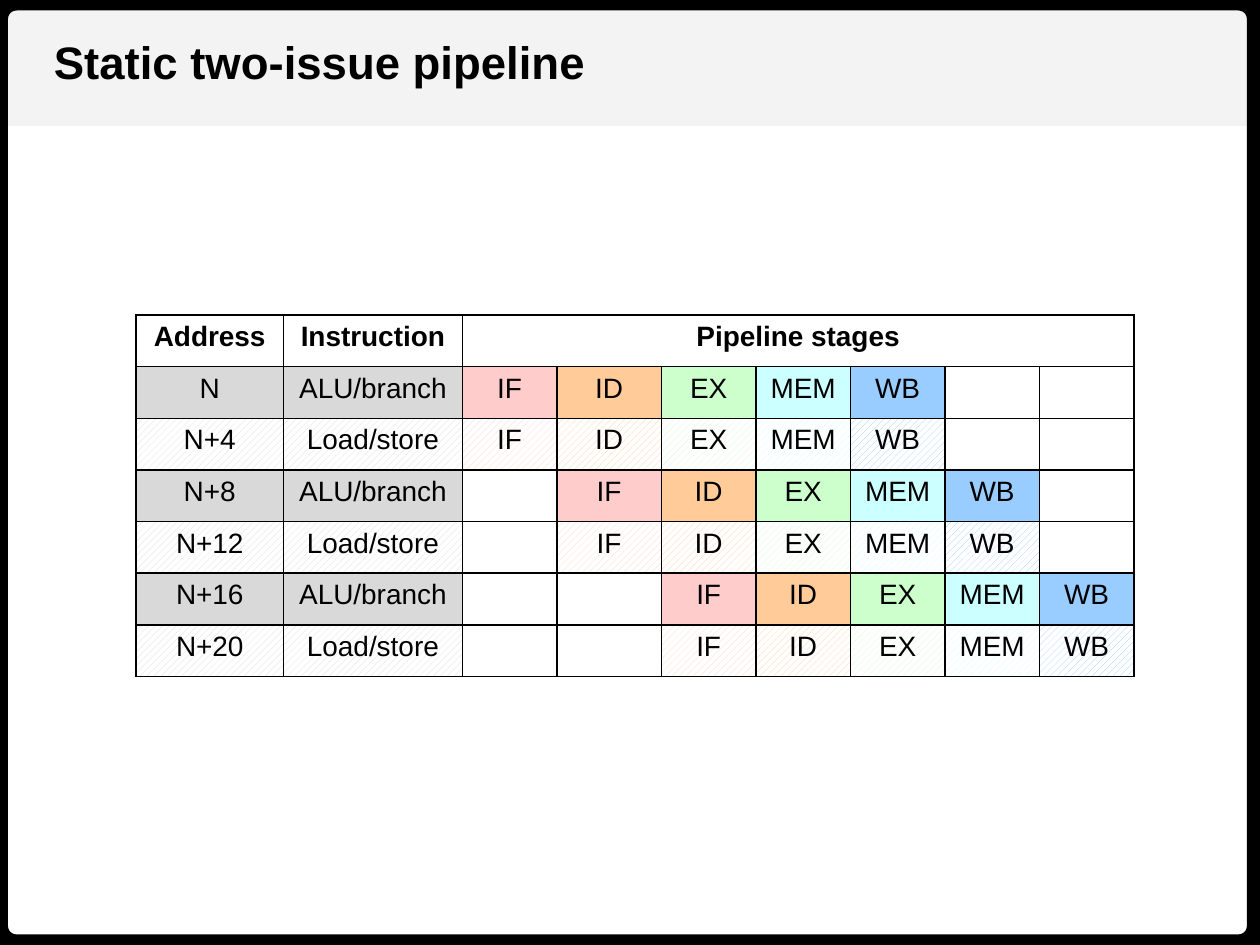
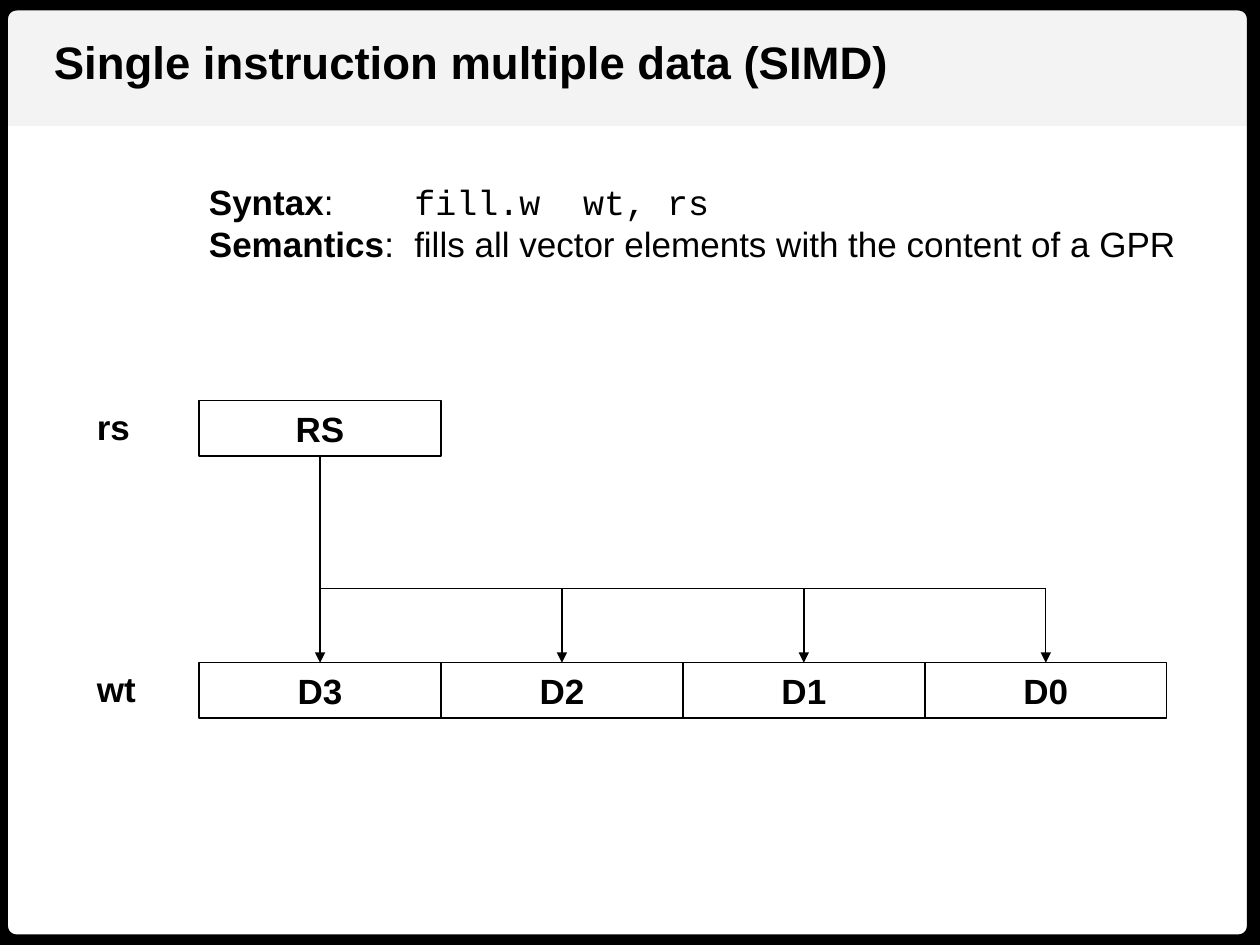
"""Build two slides on pipelining and vector instructions."""
from dataclasses import dataclass

from lxml.etree import SubElement
from pptx import Presentation
from pptx.dml.color import RGBColor
from pptx.enum.dml import MSO_PATTERN
from pptx.enum.shapes import MSO_CONNECTOR, MSO_SHAPE
from pptx.enum.text import MSO_ANCHOR, PP_ALIGN
from pptx.oxml import parse_xml
from pptx.oxml.ns import nsdecls, qn
from pptx.util import Inches, Pt


@dataclass(frozen=True)
class Theme:
    ink: str = "000000"
    paper: str = "FFFFFF"
    band: str = "F3F3F3"
    gray: str = "D9D9D9"
    sans: str = "Arial"
    mono: str = "Courier New"
    title: int = 26
    body: int = 20
    cell: int = 16
    thin: float = 0.75
    grid: int = 1
    frame: int = 12


THEME = Theme()

PIPE_TITLE = "Static two-issue pipeline"
HEADS = ["Address", "Instruction", "Pipeline stages"]
KINDS = ["ALU/branch", "Load/store"]
STAGES = [
    ("IF", "FFCCCC"),
    ("ID", "FFCC99"),
    ("EX", "CCFFCC"),
    ("MEM", "CCFFFF"),
    ("WB", "99CCFF"),
]
PAIRS = 3
WIDTHS = [1.17, 1.42, 0.75, 0.83] + [0.75] * 5
ROW = 0.41

SIMD_TITLE = "Single instruction multiple data (SIMD)"
NOTES = [
    ("Syntax", [(":\t", THEME.sans), ("fill.w\twt, rs", THEME.mono)]),
    ("Semantics", [(":\tfills all vector elements with the content of a GPR", THEME.sans)]),
]
TABS = [1.63, 2.97]
BANKS = [("rs", 0.47, 3.18, ["RS"]), ("wt", 0.51, 5.26, ["D3", "D2", "D1", "D0"])]
LEFT, WIDE, HIGH = 1.58, 1.92, 0.44
BUS = 4.67


def color(code):
    return RGBColor.from_string(code)


def write(para, text, size=THEME.body, bold=False, font=THEME.sans, align=PP_ALIGN.LEFT):
    para.alignment = align
    run = para.add_run()
    run.text = text
    run.font.name = font
    run.font.size = Pt(size)
    run.font.bold = bold
    run.font.color.rgb = color(THEME.ink)


def add_text(slide, *place):
    frame = slide.shapes.add_textbox(*map(Inches, place)).text_frame
    frame.word_wrap = False
    return frame


def add_box(slide, kind, place, fill=None, line=None):
    box = slide.shapes.add_shape(kind, *map(Inches, place))
    box.shadow.inherit = False
    if fill:
        box.fill.solid()
        box.fill.fore_color.rgb = color(fill)
    else:
        box.fill.background()
    if line:
        box.line.color.rgb = color(THEME.ink)
        box.line.width = Pt(line)
    else:
        box.line.fill.background()
    return box


def add_line(slide, start, end, arrow=False):
    wire = slide.shapes.add_connector(MSO_CONNECTOR.STRAIGHT, *map(Inches, start + end))
    wire.line.color.rgb = color(THEME.ink)
    wire.line.width = Pt(THEME.thin)
    props = wire.element.spPr
    if arrow:
        SubElement(props.find(qn("a:ln")), qn("a:tailEnd"), type="triangle")
    SubElement(props, qn("a:effectLst"))


def add_slide(deck, title):
    slide = deck.slides.add_slide(deck.slide_layouts[6])
    add_box(slide, MSO_SHAPE.RECTANGLE, (0, 0, 10, 1), fill=THEME.band)
    frame = add_box(slide, MSO_SHAPE.ROUNDED_RECTANGLE, (-0.02, 0, 10, 7.5), line=THEME.frame)
    frame.adjustments[0] = 0.02
    head = add_text(slide, 0.33, 0.22, 7, 0.54)
    write(head.paragraphs[0], title, size=THEME.title, bold=True)
    return slide


def rule_cell(cell):
    props = cell._tc.get_or_add_tcPr()
    for spot, side in enumerate("LRTB"):
        edge = parse_xml(
            f'<a:ln{side} {nsdecls("a")} w="{Pt(THEME.grid)}"><a:solidFill>'
            f'<a:srgbClr val="{THEME.ink}"/></a:solidFill></a:ln{side}>'
        )
        props.insert(spot, edge)


def set_cell(cell, text="", tint=THEME.paper, striped=False, bold=False):
    if striped:
        cell.fill.patterned()
        cell.fill.pattern = MSO_PATTERN.WIDE_UPWARD_DIAGONAL
        cell.fill.back_color.rgb = color(THEME.paper)
    else:
        cell.fill.solid()
    cell.fill.fore_color.rgb = color(tint)
    if text:
        para = cell.text_frame.paragraphs[0]
        write(para, text, size=THEME.cell, bold=bold, align=PP_ALIGN.CENTER)


def draw_pipe(deck):
    slide = add_slide(deck, PIPE_TITLE)
    count = 1 + PAIRS * len(KINDS)
    place = map(Inches, (1.08, 2.5, sum(WIDTHS), ROW * count))
    table = slide.shapes.add_table(count, len(WIDTHS), *place).table
    table.first_row = table.horz_banding = False
    for col, width in zip(table.columns, WIDTHS):
        col.width = Inches(width)
    for row in table.rows:
        row.height = Inches(ROW)
    for cell in table.iter_cells():
        set_cell(cell)
        rule_cell(cell)
    table.cell(0, 2).merge(table.cell(0, len(WIDTHS) - 1))
    for col, text in enumerate(HEADS):
        set_cell(table.cell(0, col), text, bold=True)
    for step in range(count - 1):
        pair, kind = divmod(step, len(KINDS))
        name = f"N+{4 * step}" if step else "N"
        parts = [(0, name, THEME.gray), (1, KINDS[kind], THEME.gray)]
        parts += [(2 + pair + i, *stage) for i, stage in enumerate(STAGES)]
        for col, text, tint in parts:
            set_cell(table.cell(step + 1, col), text, tint, striped=kind == 1)


def draw_simd(deck):
    slide = add_slide(deck, SIMD_TITLE)
    for name, width, top, cells in BANKS:
        label = add_text(slide, 0.67, top - 0.01, width, HIGH)
        write(label.paragraphs[0], name, bold=True)
        for i, text in enumerate(cells):
            place = (LEFT + i * WIDE, top, WIDE, HIGH)
            box = add_box(slide, MSO_SHAPE.RECTANGLE, place, line=THEME.thin)
            box.text_frame.vertical_anchor = MSO_ANCHOR.MIDDLE
            write(box.text_frame.paragraphs[0], text, bold=True, align=PP_ALIGN.CENTER)

    source, target = BANKS[0][2] + HIGH, BANKS[1][2]
    mids = [LEFT + (i + 0.5) * WIDE for i in range(len(BANKS[1][3]))]
    add_line(slide, (mids[0], source), (mids[0], BUS))
    add_line(slide, (mids[0], BUS), (mids[-1], BUS))
    for mid in mids:
        add_line(slide, (mid, BUS), (mid, target), arrow=True)

    frame = add_text(slide, 1.56, 1.38, 7.94, 0.77)
    for i, (term, runs) in enumerate(NOTES):
        para = frame.add_paragraph() if i else frame.paragraphs[0]
        write(para, term, bold=True)
        for text, font in runs:
            write(para, text, font=font)
        stops = SubElement(para._p.get_or_add_pPr(), qn("a:tabLst"))
        for stop in TABS:
            SubElement(stops, qn("a:tab"), pos=str(Inches(stop)), algn="l")


def main():
    deck = Presentation()
    deck.slide_width, deck.slide_height = Inches(10), Inches(7.5)
    draw_pipe(deck)
    draw_simd(deck)
    deck.save("out.pptx")


if __name__ == "__main__":
    main()
